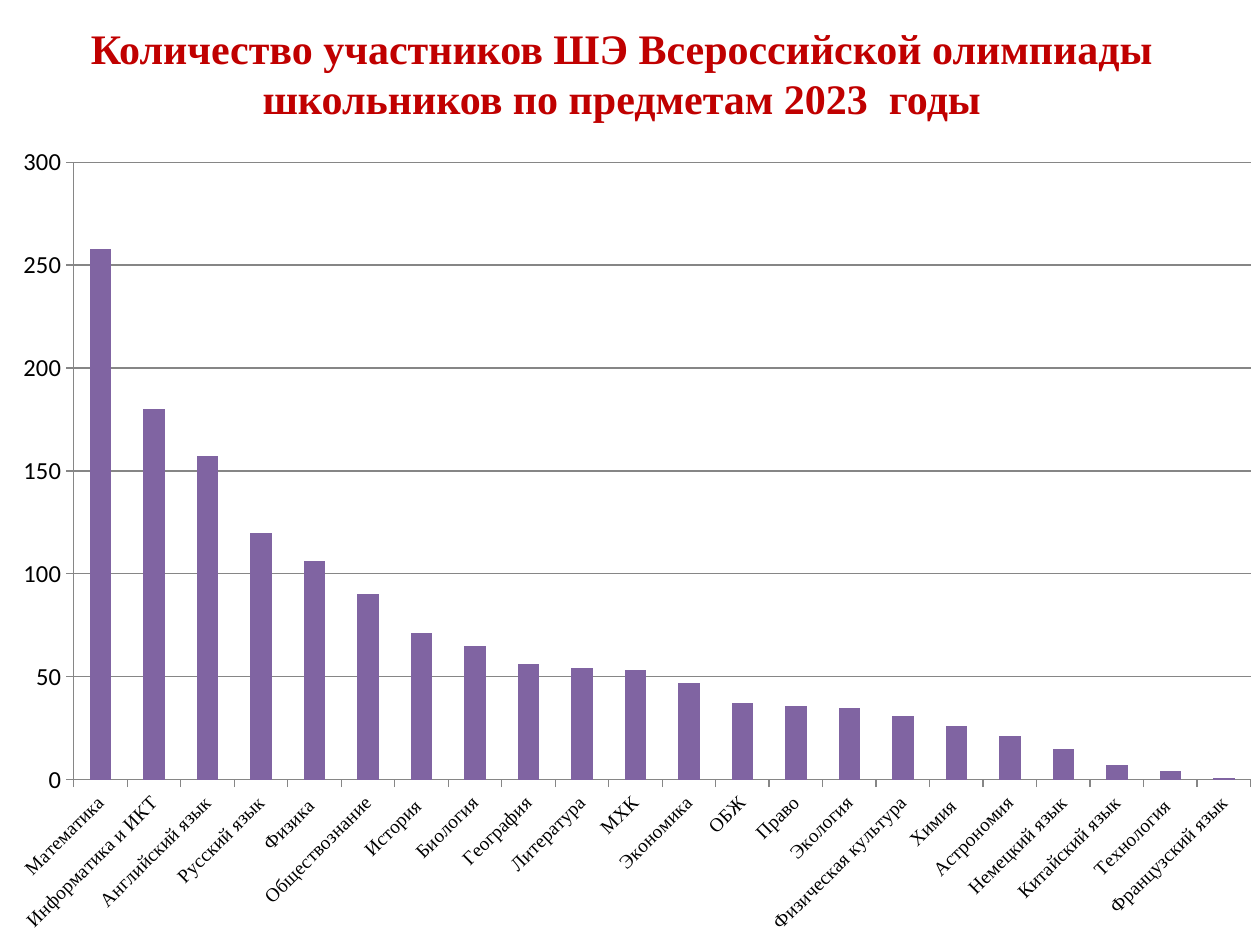
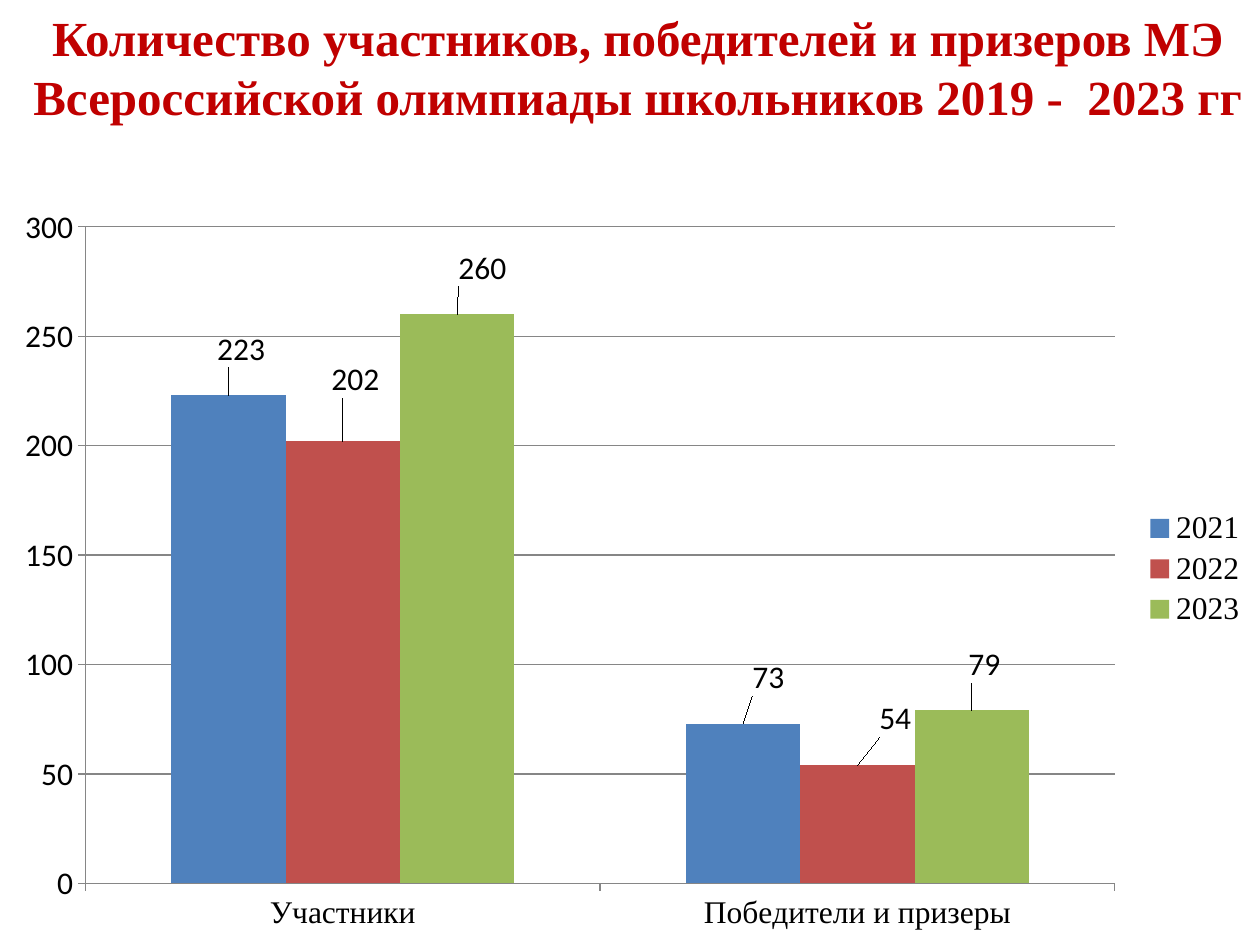
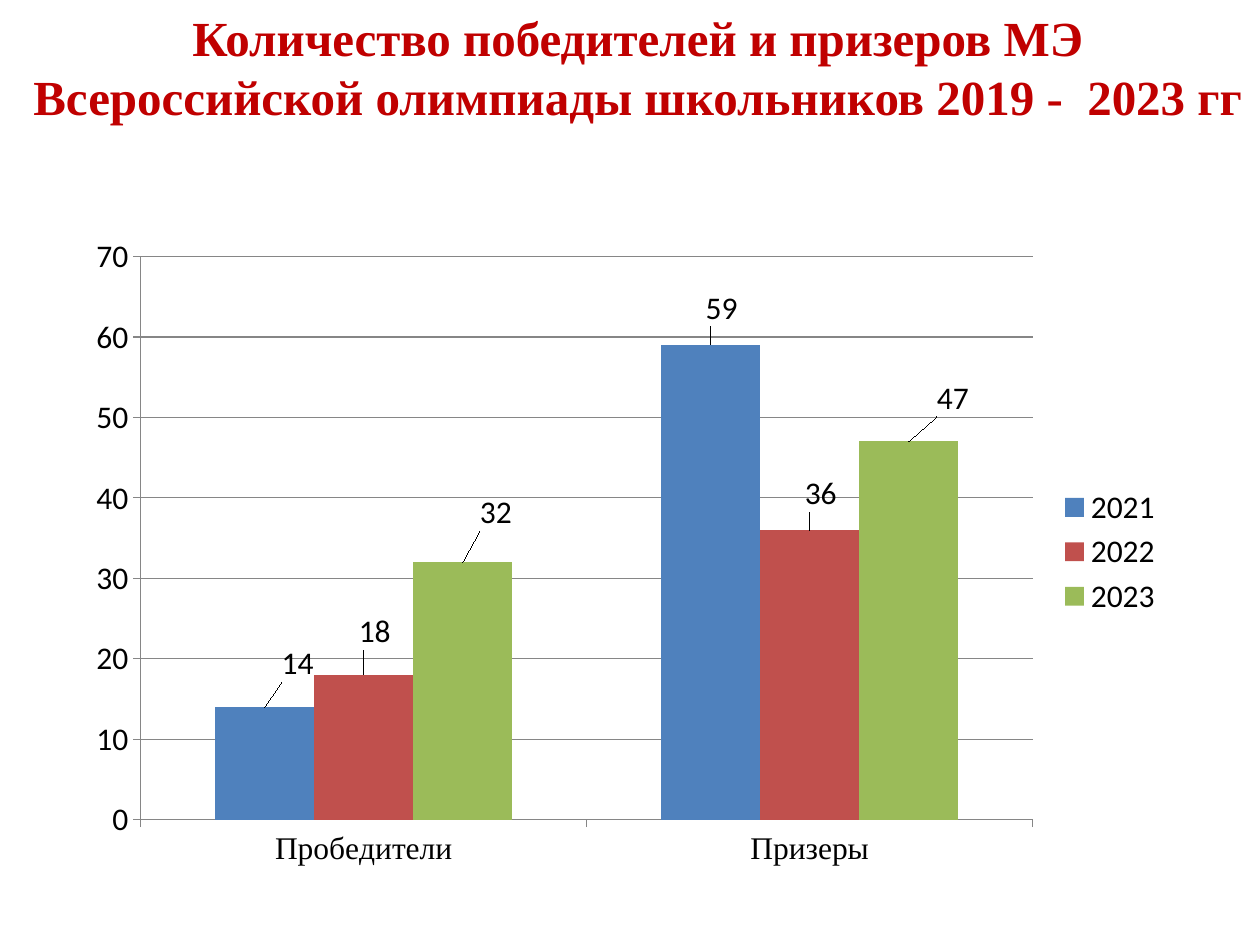
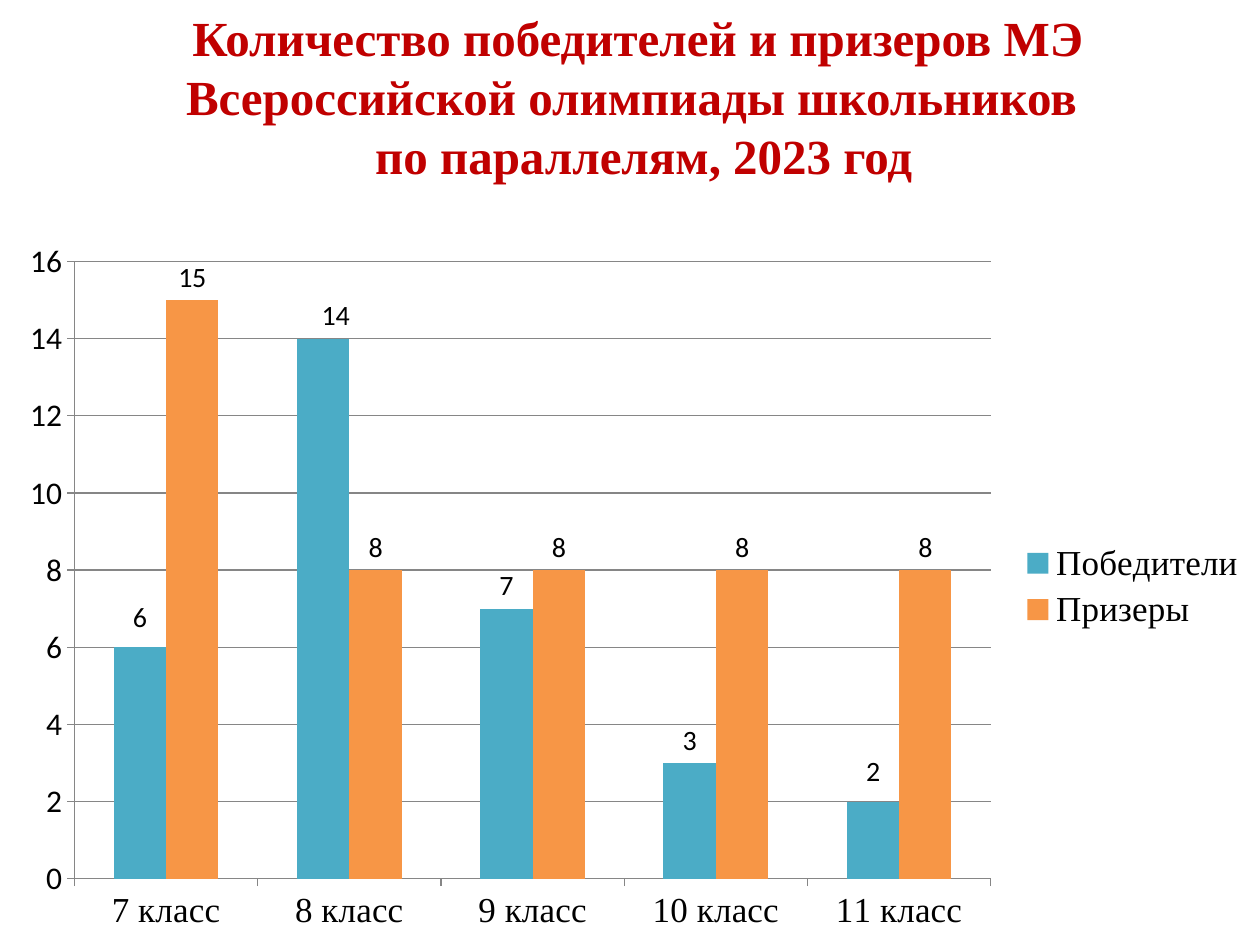
from lxml import etree
from pptx import Presentation
from pptx.chart.data import CategoryChartData
from pptx.dml.color import RGBColor
from pptx.enum.chart import (XL_CHART_TYPE, XL_LABEL_POSITION,
                             XL_LEGEND_POSITION, XL_TICK_MARK)
from pptx.enum.text import MSO_AUTO_SIZE, PP_ALIGN
from pptx.oxml.ns import qn
from pptx.util import Inches, Pt

COLUMNS = XL_CHART_TYPE.COLUMN_CLUSTERED
ABOVE_BAR = XL_LABEL_POSITION.OUTSIDE_END
LEGEND_RIGHT = XL_LEGEND_POSITION.RIGHT
TICK_OUT, TICK_NONE = XL_TICK_MARK.OUTSIDE, XL_TICK_MARK.NONE
CENTER = PP_ALIGN.CENTER
FIT_SHAPE = MSO_AUTO_SIZE.SHAPE_TO_FIT_TEXT

SERIF, SANS = "Times New Roman", "Calibri"
COLORS = {
    "title": "C00000", "text": "000000", "grid": "868686",
    "subjects": "8064A2",
    "2021": "4F81BD", "2022": "C0504D", "2023": "9BBB59",
    "Победители": "4BACC6", "Призеры": "F79646",
}

SUBJECTS = [
    ("Математика", 258), ("Информатика и ИКТ", 180), ("Английский язык", 157),
    ("Русский язык", 120), ("Физика ", 106), ("Обществознание", 90),
    ("История ", 71), ("Биология", 65), ("География", 56), ("Литература", 54),
    ("МХК", 53), ("Экономика", 47), ("ОБЖ", 37), ("Право", 36),
    ("Экология", 35), ("Физическая культура", 31), ("Химия ", 26),
    ("Астрономия", 21), ("Немецкий язык", 15), ("Китайский язык", 7),
    ("Технология ", 4), ("Французский язык", 1),
]

# Each series: name, colour key, values, label shifts by point (shares of chart size)
SLIDES = [
    {
        "title": ["Количество участников ШЭ Всероссийской олимпиады "
                  "школьников по предметам 2023  годы"],
        "title_box": (0.35, 0.13, 9.17, 0.91), "title_size": 24,
        "chart_box": (0.05, 1.07, 10.7, 6.39),
        "categories": [subject for subject, _ in SUBJECTS],
        "series": [("Series 1", "subjects", [count for _, count in SUBJECTS], {})],
        "scale": (300, 50), "category_size": 11, "value_size": 14,
        "category_turn": -45, "plot_area": (0.05, 0.034, 0.873, 0.767),
    },
    {
        "title": ["Количество участников, победителей и призеров МЭ "
                  "Всероссийской олимпиады школьников 2019 -  2023 гг"],
        "title_box": (0.12, 0.01, 9.88, 1.04),
        "chart_box": (0, 1.53, 10, 5.97),
        "categories": ["Участники", "Победители и призеры"],
        "series": [
            ("2021", "2021", [223, 73], {0: (0.01, -0.03), 1: (0.02, -0.03)}),
            ("2022", "2022", [202, 54], {0: (0.01, -0.05), 1: (0.03, -0.03)}),
            ("2023", "2023", [260, 79], {0: (0.02, -0.03), 1: (0.01, -0.03)}),
        ],
        "scale": (300, 50), "legend": (SERIF, 18), "label_size": 18,
    },
    {
        "title": ["Количество победителей и призеров МЭ "
                  "Всероссийской олимпиады школьников 2019 -  2023 гг"],
        "title_box": (0.12, 0.01, 9.88, 1.04),
        "chart_box": (0.59, 1.78, 8.74, 5.2),
        "categories": ["Пробедители", "Призеры"],
        "series": [
            ("2021", "2021", [14, 59], {0: (0.03, -0.03), 1: (0.01, -0.02)}),
            ("2022", "2022", [18, 36], {0: (0.01, -0.03), 1: (0.01, -0.02)}),
            ("2023", "2023", [32, 47], {0: (0.03, -0.04), 1: (0.04, -0.03)}),
        ],
        "scale": (70, 10), "legend": (SANS, 18), "label_size": 18,
    },
    {
        "title": ["Количество победителей и призеров МЭ "
                  "Всероссийской олимпиады школьников ",
                  " по параллелям, 2023 год"],
        "title_box": (0.12, 0.01, 9.88, 1.51),
        "chart_box": (0.04, 1.81, 9.96, 5.69),
        "categories": [f"{grade} класс" for grade in range(7, 12)],
        "series": [
            ("Победители", "Победители", [6, 14, 7, 3, 2],
             {0: (0, -0.01), 1: (0.01, 0), 3: (0, 0), 4: (0, -0.01)}),
            ("Призеры", "Призеры", [15, 8, 8, 8, 8], {}),
        ],
        "scale": (16, 2), "category_size": 20, "legend": (SERIF, 20),
        "label_size": 16,
    },
]


def color(key):
    return RGBColor.from_string(COLORS[key])


def set_font(font, name, size, key="text", bold=False):
    font.name, font.size, font.bold = name, Pt(size), bold
    font.color.rgb = color(key)


def add_text(slide, box, paragraphs, *, size, name=SERIF, key="title",
             bold=True, align=CENTER):
    frame = slide.shapes.add_textbox(*map(Inches, box)).text_frame
    frame.word_wrap = True
    frame.auto_size = FIT_SHAPE
    for index, text in enumerate(paragraphs):
        paragraph = frame.paragraphs[0] if index == 0 else frame.add_paragraph()
        paragraph.alignment = align
        run = paragraph.add_run()
        run.text = text
        set_font(run.font, name, size, key, bold)


def manual_layout(**settings):
    layout = etree.Element(qn("c:layout"))
    manual = etree.SubElement(layout, qn("c:manualLayout"))
    for tag, value in settings.items():
        etree.SubElement(manual, qn(f"c:{tag}")).set("val", str(value))
    return layout


def place_plot_area(chart, area):
    plot_area = chart._chartSpace.find(f".//{qn('c:plotArea')}")
    for automatic in plot_area.findall(qn("c:layout")):
        plot_area.remove(automatic)
    x, y, w, h = area
    plot_area.insert(0, manual_layout(layoutTarget="inner", xMode="edge",
                                      yMode="edge", x=x, y=y, w=w, h=h))


def style_axis(axis, name, size):
    axis.major_tick_mark, axis.minor_tick_mark = TICK_OUT, TICK_NONE
    axis.format.line.color.rgb = color("grid")
    axis.format.line.width = Pt(0.75)
    set_font(axis.tick_labels.font, name, size)


def label_series(series, size, shifts):
    labels = series.data_labels
    labels.show_value = True
    labels.position = ABOVE_BAR
    set_font(labels.font, SANS, size)
    for index, (dx, dy) in shifts.items():
        label = series.points[index].data_label
        label.position = ABOVE_BAR
        set_font(label.font, SANS, size)
        for point_index in series._element.iter(qn("c:idx")):
            holder = point_index.getparent()
            if holder.tag == qn("c:dLbl") and point_index.get("val") == str(index):
                point_index.addnext(manual_layout(x=dx, y=dy))


def add_column_chart(slide, content):
    data = CategoryChartData()
    data.categories = content["categories"]
    for name, _, values, _ in content["series"]:
        data.add_series(name, values)
    box = map(Inches, content["chart_box"])
    chart = slide.shapes.add_chart(COLUMNS, *box, data).chart
    chart.has_title = False
    set_font(chart.font, SANS, 18)

    plot = chart.plots[0]
    plot.gap_width, plot.overlap, plot.vary_by_categories = 150, 0, False
    for series, (_, key, _, shifts) in zip(plot.series, content["series"]):
        series.format.fill.solid()
        series.format.fill.fore_color.rgb = color(key)
        series.invert_if_negative = False
        if "label_size" in content:
            label_series(series, content["label_size"], shifts)

    categories, values = chart.category_axis, chart.value_axis
    style_axis(categories, SERIF, content.get("category_size", 18))
    style_axis(values, SANS, content.get("value_size", 18))
    values.minimum_scale = 0
    values.maximum_scale, values.major_unit = content["scale"]
    values.has_major_gridlines = True
    values.major_gridlines.format.line.color.rgb = color("grid")
    values.major_gridlines.format.line.width = Pt(0.75)
    if "category_turn" in content:
        body = categories._element.find(f"{qn('c:txPr')}/{qn('a:bodyPr')}")
        body.set("rot", str(content["category_turn"] * 60000))
    if "plot_area" in content:
        place_plot_area(chart, content["plot_area"])

    chart.has_legend = "legend" in content
    if chart.has_legend:
        chart.legend.position = LEGEND_RIGHT
        chart.legend.include_in_layout = False
        set_font(chart.legend.font, *content["legend"])


def main():
    deck = Presentation()
    deck.slide_width, deck.slide_height = Inches(10), Inches(7.5)
    blank = deck.slide_layouts[6]
    for content in SLIDES:
        slide = deck.slides.add_slide(blank)
        add_column_chart(slide, content)
        add_text(slide, content["title_box"], content["title"],
                 size=content.get("title_size", 28))
    deck.save("out.pptx")


if __name__ == "__main__":
    main()
